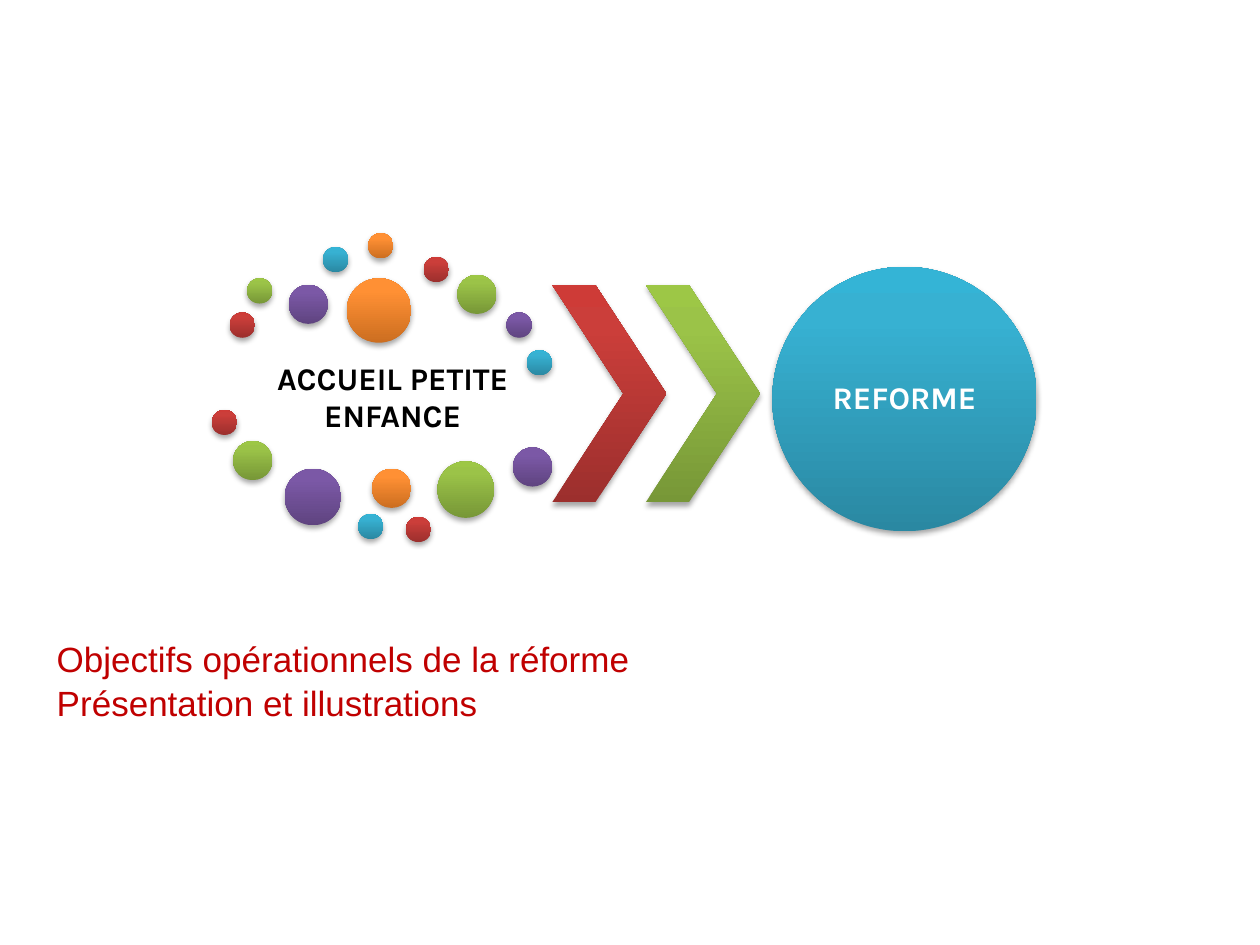
import copy

import lxml.etree
import pptx
import pptx.dml.color
import pptx.enum.shapes
import pptx.enum.text
import pptx.oxml
import pptx.oxml.ns
import pptx.util

Cm, Pt = pptx.util.Cm, pptx.util.Pt
SHAPE = pptx.enum.shapes.MSO_SHAPE
ALIGN = pptx.enum.text.PP_ALIGN

COLORS = {"subtitle": "C00000", "dark": "000000", "light": "FFFFFF"}
# Gradient stops at 0, 80 and 100 %, from bottom to top
GRADIENTS = {
    "red": ("9C2F2D", "CB3E3A", "CE3B37"),
    "green": ("779737", "9BC348", "9DC746"),
    "purple": ("5F4480", "7B58A6", "7C57A8"),
    "blue": ("2A88A2", "37B1D2", "34B4D6"),
    "orange": ("CC6E20", "FF9034", "FF9136"),
}
SMALL, MEDIUM, LARGE, HUGE = 0.51, 0.79, 1.14, 1.3
# Left, top and diameter in cm within the cloud; colours follow in turn
DOTS = [
    (0.36, 1.6, SMALL), (0.71, 0.91, SMALL), (1.55, 1.04, MEDIUM),
    (2.24, 0.28, SMALL), (3.15, 0, SMALL), (4.27, 0.48, SMALL),
    (4.95, 0.84, MEDIUM), (5.94, 1.6, SMALL), (6.35, 2.36, SMALL),
    (2.72, 0.91, HUGE), (0, 3.56, SMALL), (0.43, 4.19, MEDIUM),
    (1.47, 4.75, LARGE), (2.95, 5.66, SMALL), (3.23, 4.75, MEDIUM),
    (3.91, 5.72, SMALL), (4.55, 4.6, LARGE), (6.07, 4.32, MEDIUM),
]
SHADOW = (
    '<a:effectLst %s><a:outerShdw blurRad="40000" dist="23000" dir="5400000"'
    ' rotWithShape="0"><a:srgbClr val="000000"><a:alpha val="35000"/>'
    "</a:srgbClr></a:outerShdw></a:effectLst>" % pptx.oxml.ns.nsdecls("a")
)


def rgb(name):
    return pptx.dml.color.RGBColor.from_string(COLORS[name])


def add_glossy(shapes, kind, x, y, w, h, color):
    """Add a borderless shape with a vertical gradient and a soft shadow."""
    sp = shapes.add_shape(kind, Cm(x), Cm(y), Cm(w), Cm(h))
    sp.line.fill.background()
    sp.fill.gradient()
    sp.fill.gradient_angle = 90
    last = sp.fill.gradient_stops[1].color
    last.rgb = pptx.dml.color.RGBColor.from_string(GRADIENTS[color][2])
    stops = sp._element.spPr.find(".//" + pptx.oxml.ns.qn("a:gsLst"))
    stops.insert(1, copy.deepcopy(stops[1]))
    for stop, position, value in zip(sp.fill.gradient_stops, (0, 0.8, 1), GRADIENTS[color]):
        stop.position = position
        stop.color.rgb = pptx.dml.color.RGBColor.from_string(value)
    sp._element.spPr.append(pptx.oxml.parse_xml(SHADOW))
    return sp


def add_label(shapes, x, y, w, h, text, color, inset=0):
    sp = shapes.add_textbox(Cm(x), Cm(y), Cm(w), Cm(h))
    tf = sp.text_frame
    tf.word_wrap = True
    tf.vertical_anchor = pptx.enum.text.MSO_ANCHOR.MIDDLE
    tf.margin_left = tf.margin_right = tf.margin_top = tf.margin_bottom = Cm(inset)
    tf.text = text
    p = tf.paragraphs[0]
    p.alignment = ALIGN.CENTER
    font = p.runs[0].font
    font.name, font.size, font.bold = "Karla", Pt(18), True
    font.color.rgb = rgb(color)
    return p


def add_cloud(shapes, x, y):
    add_label(shapes, x + 0.51, y + 2.26, 6.27, 2.06, "ACCUEIL PETITE ENFANCE", "dark", 0.08)
    names = list(GRADIENTS)
    for i, (dx, dy, d) in enumerate(DOTS):
        add_glossy(shapes, SHAPE.OVAL, x + dx, y + dy, d, d, names[i % len(names)])


def add_chevrons(shapes, x, y, w, h):
    """Place two overlapping chevrons across the box."""
    chevron_w = 0.55 * w
    for left, color in ((x, "red"), (x + w - chevron_w, "green")):
        sp = add_glossy(shapes, SHAPE.CHEVRON, left, y, chevron_w, h, color)
        sp.adjustments[0] = 0.623


def add_result(shapes, x, y, d):
    add_glossy(shapes, SHAPE.OVAL, x, y, d, d, "blue")
    inset = 0.79
    p = add_label(shapes, x + inset, y + inset, d - 2 * inset, d - 2 * inset, "REFORME", "light")
    p.line_spacing = 0.9


def format_subtitle(sp, x, y, w, h):
    sp.left, sp.top, sp.width, sp.height = Cm(x), Cm(y), Cm(w), Cm(h)
    tf = sp.text_frame
    tf.text = "Objectifs opérationnels de la réforme\nPrésentation et illustrations"
    tf.auto_size = pptx.enum.text.MSO_AUTO_SIZE.NONE
    for i, p in enumerate(tf.paragraphs):
        p.alignment = ALIGN.LEFT
        p.space_before = Pt(i)
        font = p.runs[0].font
        font.name, font.size = "Arial", Pt(20)
        font.color.rgb = rgb("subtitle")


def main():
    prs = pptx.Presentation()
    prs.slide_width, prs.slide_height = Cm(25.4), Cm(19.05)
    s = prs.slides.add_slide(prs.slide_layouts[0])
    title = s.shapes.title._element
    title.getparent().remove(title)
    format_subtitle(s.placeholders[1], 0.89, 12.73, 18.01, 3)
    diagram = s.shapes.add_group_shape().shapes
    add_cloud(diagram, 4.27, 4.7)
    add_chevrons(diagram, 11.13, 5.74, 4.19, 4.39)
    add_result(diagram, 15.57, 5.38, 5.33)
    prs.save("out.pptx")


if __name__ == "__main__":
    main()
